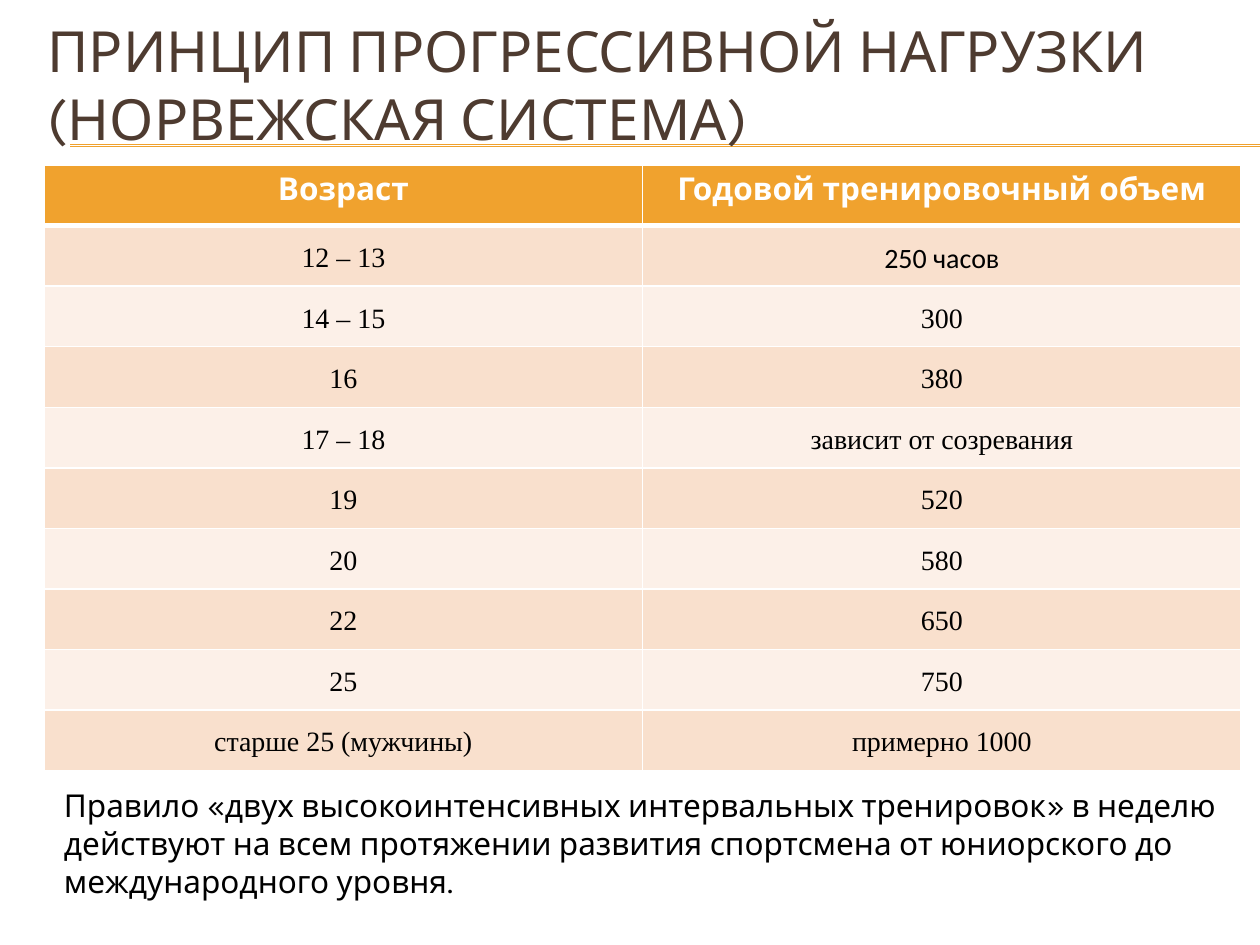
from dataclasses import dataclass

from lxml.etree import SubElement
from pptx import Presentation
from pptx.dml.color import RGBColor
from pptx.enum.shapes import MSO_CONNECTOR
from pptx.enum.text import MSO_ANCHOR, PP_ALIGN
from pptx.oxml.ns import qn
from pptx.util import Cm, Pt


@dataclass(frozen=True)
class Theme:
    accent: str = "F0A22E"
    title: str = "4E3B30"
    ink: str = "000000"
    white: str = "FFFFFF"
    bands: tuple = ("F9E0CD", "FCF0E8")
    sans: str = "Karla"
    serif: str = "Times New Roman"
    unit: str = "Calibri"
    head: float = 32.4
    body: float = 18
    cell: float = 16


THEME = Theme()
HEADS = ("Возраст", "Годовой тренировочный объем")
ROWS = (
    ("12 – 13", "250 часов"),
    ("14 – 15", "300"),
    ("16", "380"),
    ("17 – 18", "зависит от созревания"),
    ("19", "520"),
    ("20", "580"),
    ("22", "650"),
    ("25", "750"),
    ("старше 25 (мужчины)", "примерно 1000"),
)


def write(frame, text, size=THEME.body, font=THEME.sans, color=THEME.ink,
          bold=False, align=PP_ALIGN.LEFT, space=None):
    para = frame.paragraphs[0]
    para.alignment = align
    para.line_spacing = space
    run = para.add_run()
    run.text = text
    run.font.size = Pt(size)
    run.font.name = font
    run.font.bold = bold
    run.font.color.rgb = RGBColor.from_string(color)


def add_text(slide, box, text, anchor=MSO_ANCHOR.TOP, **style):
    frame = slide.shapes.add_textbox(*map(Cm, box)).text_frame
    frame.word_wrap = True
    frame.vertical_anchor = anchor
    write(frame, text, **style)


def add_rule(slide, left, right, top):
    line = slide.shapes.add_connector(
        MSO_CONNECTOR.STRAIGHT, Cm(left), Cm(top), Cm(right), Cm(top))
    line.line.color.rgb = RGBColor.from_string(THEME.accent)
    line.line.width = Pt(0.75)
    SubElement(line._element.spPr, qn("a:effectLst"))


def add_title(slide, box):
    left, top, width, height = box
    for gap in (0.05, 0.08):
        add_rule(slide, left + 0.71, 25.4, top + height + gap)
    add_text(slide, box, "ПРИНЦИП ПРОГРЕССИВНОЙ НАГРУЗКИ (НОРВЕЖСКАЯ СИСТЕМА)",
             anchor=MSO_ANCHOR.MIDDLE, size=THEME.head, color=THEME.title)


def set_edges(cell, **widths):
    """Draw white cell borders; keys are L, R, T, B in schema order."""
    props = cell._tc.get_or_add_tcPr()
    for side, width in widths.items():
        edge = SubElement(props, qn(f"a:ln{side}"), w=str(Pt(width)))
        fill = SubElement(edge, qn("a:solidFill"))
        SubElement(fill, qn("a:srgbClr"), val=THEME.white)


def fill_cell(cell, color):
    cell.fill.solid()
    cell.fill.fore_color.rgb = RGBColor.from_string(color)


def add_head(cell, text):
    set_edges(cell, L=1, R=1, T=1, B=3)
    fill_cell(cell, THEME.accent)
    write(cell.text_frame, text, color=THEME.white, bold=True,
          align=PP_ALIGN.CENTER)


def add_cell(cell, text, band):
    set_edges(cell, L=1, R=1, B=1)
    fill_cell(cell, band)
    cell.vertical_anchor = MSO_ANCHOR.MIDDLE
    cell.margin_left = cell.margin_right = Cm(0.08)
    cell.margin_top = cell.margin_bottom = Cm(0.08)
    font = THEME.unit if "часов" in text else THEME.serif
    write(cell.text_frame, text, size=THEME.cell, font=font,
          align=PP_ALIGN.CENTER, space=1.15)


def add_grid(slide, box):
    table = slide.shapes.add_table(
        len(ROWS) + 1, len(HEADS), *map(Cm, box)).table
    for col, text in enumerate(HEADS):
        add_head(table.cell(0, col), text)
    for row, texts in enumerate(ROWS):
        for col, text in enumerate(texts):
            add_cell(table.cell(row + 1, col), text, THEME.bands[row % 2])


def add_note(slide, box):
    add_text(slide, box,
             "Правило «двух высокоинтенсивных интервальных тренировок» в неделю "
             "действуют на всем протяжении развития спортсмена от юниорского до "
             "международного уровня.")


def main():
    deck = Presentation()
    deck.slide_width, deck.slide_height = Cm(25.4), Cm(19.05)
    slide = deck.slides.add_slide(deck.slide_layouts[6])
    add_title(slide, (0.71, 0.53, 24.13, 2.34))
    add_grid(slide, (0.89, 3.33, 24.13, 12.2))
    add_note(slide, (1.04, 15.72, 24.31, 2.57))
    deck.save("out.pptx")


if __name__ == "__main__":
    main()
